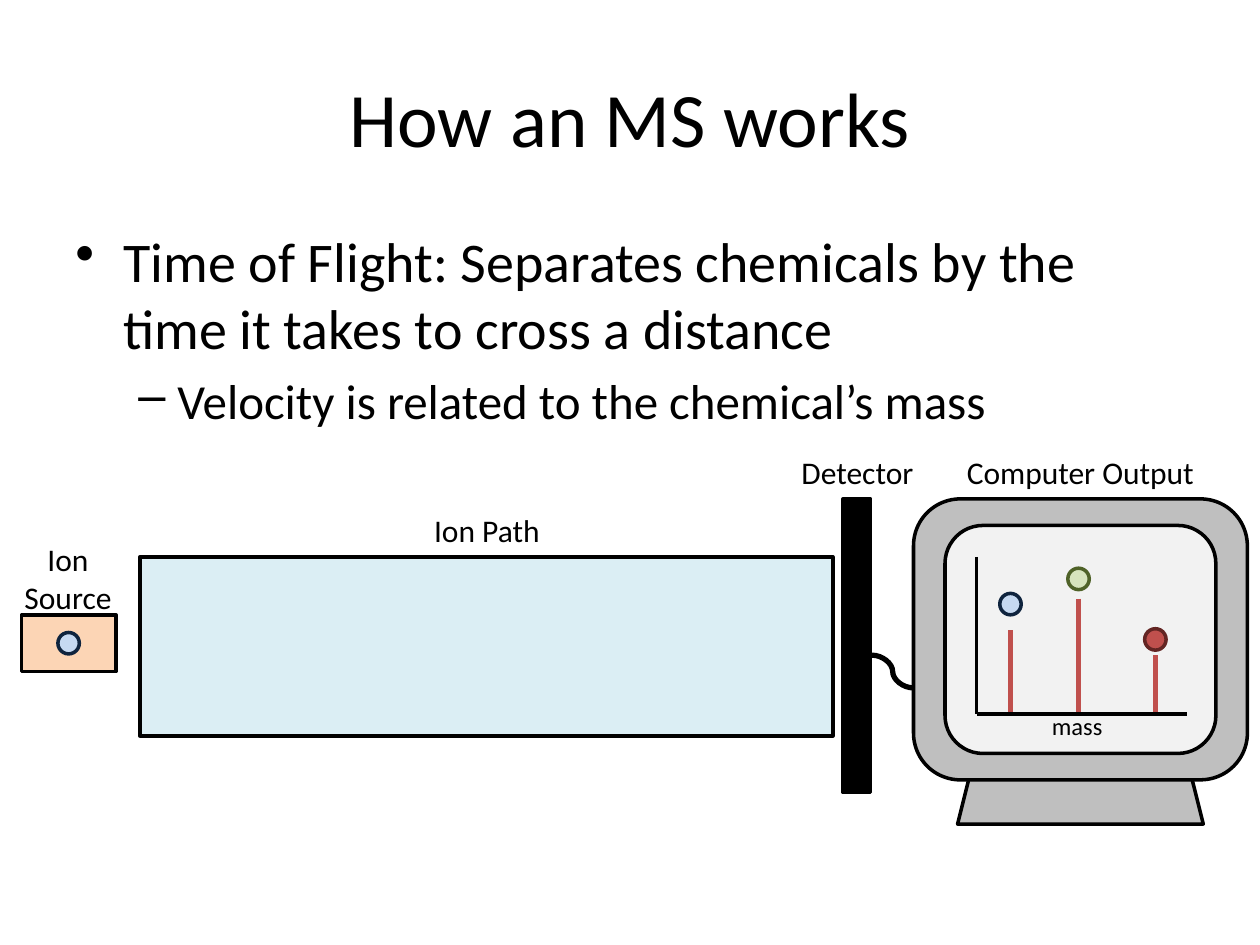
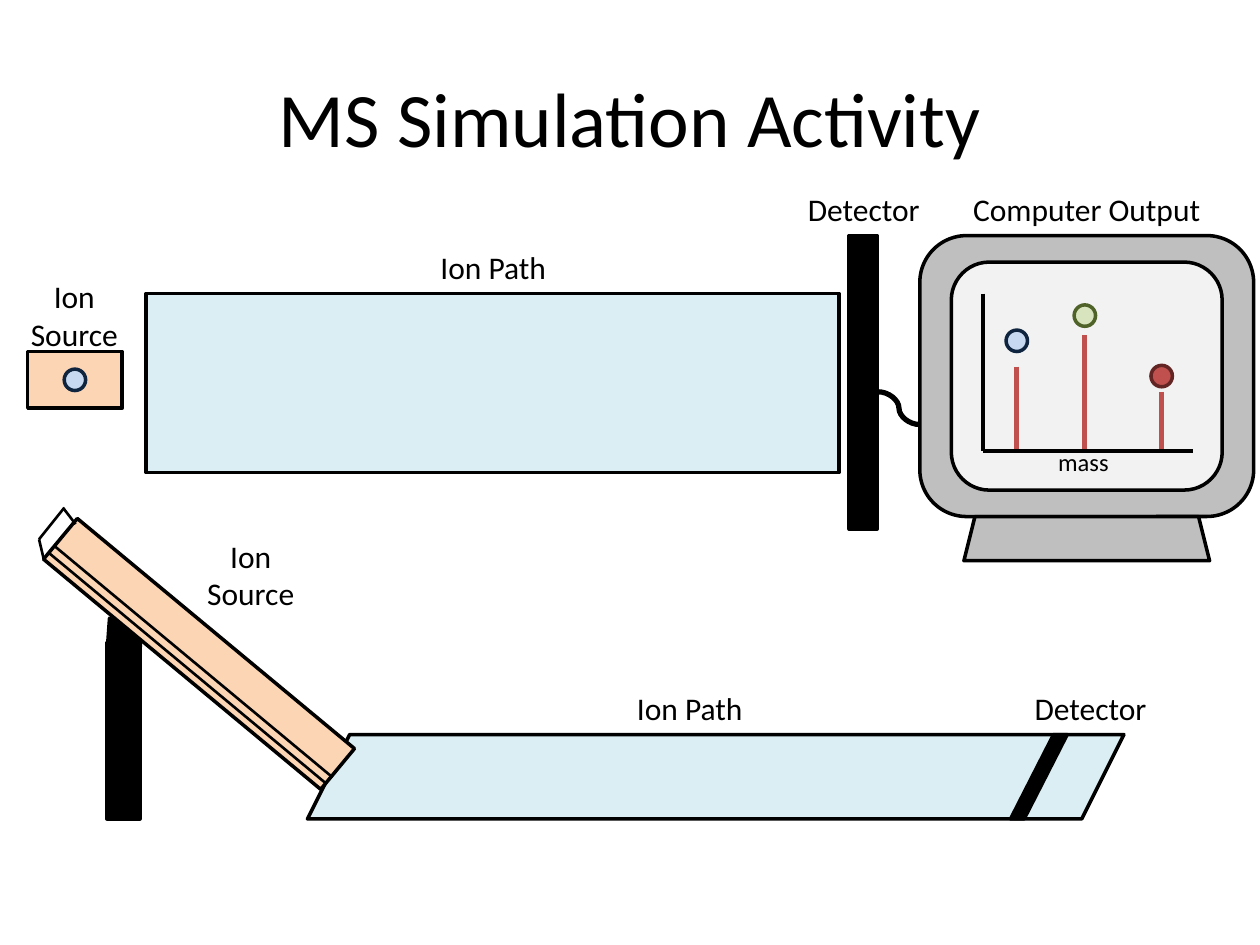
from dataclasses import dataclass

from lxml import etree
from pptx import Presentation, util as u
from pptx.dml.color import RGBColor
from pptx.enum import shapes, text
from pptx.oxml.ns import qn
from pptx.slide import Slide
from pptx.text.text import TextFrame

FONT = "Calibri"
COLORS = {
    "black": "000000",
    "path": "DBEEF4",
    "source": "FCD5B5",
    "casing": "BFBFBF",
    "screen": "F2F2F2",
    "light_ion": "C6D9F1",
    "light_edge": "0F243E",
    "medium_ion": "D7E4BD",
    "medium_edge": "4F6228",
    "heavy_ion": "C0504D",
    "heavy_edge": "632523",
    "signal": "C0504D",
}
SHAPE = shapes.MSO_SHAPE
LINK = shapes.MSO_CONNECTOR
ION_SIZE = 0.17
SIGNAL_BASE = 5.65


@dataclass(frozen=True)
class Part:
    kind: int
    x: float
    y: float
    w: float
    h: float
    fill: str
    edge: str = "black"
    turn: float = 0
    adj: float | None = None


@dataclass(frozen=True)
class Stroke:
    x1: float
    y1: float
    x2: float
    y2: float
    width: float
    color: str = "black"
    kind: int = LINK.STRAIGHT


@dataclass(frozen=True)
class Label:
    text: str
    x: float
    y: float
    w: float
    h: float = 0.4
    size: int = 18
    align: int = text.PP_ALIGN.CENTER


@dataclass(frozen=True)
class Peak:
    x: float
    top: float
    ion_top: float
    ion: str


@dataclass(frozen=True)
class Bullet:
    text: str
    mark: str
    size: int
    left: float
    hang: float
    level: int = 0


Item = Part | Stroke | Label


def ion(center: float, top: float, mass: str) -> Part:
    return Part(SHAPE.OVAL, center - ION_SIZE / 2, top, ION_SIZE, ION_SIZE,
                f"{mass}_ion", f"{mass}_edge")


PEAKS = [
    Peak(8.02, 5.0, 4.71, "light"),
    Peak(8.56, 4.75, 4.51, "medium"),
    Peak(9.17, 5.2, 4.99, "heavy"),
]

SPECTROMETER: list[Item] = [
    Part(SHAPE.RECTANGLE, 1.11, 4.42, 5.5, 1.42, "path"),
    Part(SHAPE.RECTANGLE, 0.17, 4.88, 0.75, 0.45, "source"),
    Part(SHAPE.ROUNDED_RECTANGLE, 7.25, 3.96, 2.65, 2.23, "casing"),
    Part(SHAPE.TRAPEZOID, 7.6, 6.19, 1.95, 0.35, "casing"),
    Part(SHAPE.ROUNDED_RECTANGLE, 7.5, 4.17, 2.15, 1.81, "screen"),
    Stroke(6.92, 5.2, 7.25, 5.46, 3, kind=LINK.CURVE),
    Stroke(7.75, 4.42, 7.75, 5.67, 2.25),
    Stroke(7.75, 5.67, 9.42, 5.67, 2.25),
    Label("mass", 8.25, 5.59, 0.67, 0.34, 14, text.PP_ALIGN.LEFT),
    ion(0.545, 5.02, "light"),
    *(item for peak in PEAKS for item in (
        Stroke(peak.x, peak.top, peak.x, SIGNAL_BASE, 3, "signal"),
        ion(peak.x, peak.ion_top, peak.ion),
    )),
    Label("Ion Source", 0.04, 4.24, 1, 0.71),
    Label("Ion Path", 3.06, 4.01, 1.61),
    Label("Detector", 6, 3.55, 1.61),
    Label("Computer Output", 7.5, 3.55, 2.15),
    Part(SHAPE.RECTANGLE, 6.69, 3.96, 0.22, 2.33, "black"),
]

RAMP_MODEL: list[Item] = [
    Part(SHAPE.PARALLELOGRAM, 2.44, 5.83, 6.48, 0.67, "path", adj=0.5),
    Part(SHAPE.PARALLELOGRAM, 8.02, 5.83, 0.45, 0.67, "black", adj=0.76),
    Label("Ion Source", 1.49, 4.21, 1, 0.71),
    Label("Ion Path", 4.67, 5.42, 1.61),
    Label("Detector", 7.85, 5.42, 1.61),
    Part(SHAPE.PARALLELOGRAM, 0.8, 4.97, 0.37, 0.26, "black", turn=94.2, adj=0.67),
    Part(SHAPE.RECTANGLE, 0.85, 5.1, 0.26, 1.4, "black"),
    Part(SHAPE.RECTANGLE, 0.15, 4.98, 2.86, 0.42, "source", turn=39.7),
    Stroke(0.44, 4.34, 2.64, 6.17, 1.5),
    Stroke(0.39, 4.39, 2.59, 6.22, 1.5),
    Stroke(0.31, 4.28, 0.35, 4.45, 1.5),
    Stroke(0.51, 4.03, 0.31, 4.28, 1.5),
    Stroke(0.6, 4.16, 0.5, 4.03, 1.5),
]

BULLETS = [
    Bullet("Time of Flight: Separates chemicals by the time it takes to cross a distance",
           "•", 32, 0.38, 0.38),
    Bullet("Velocity is related to the chemical’s mass", "–", 28, 0.81, 0.31, 1),
]


def rgb(name: str) -> RGBColor:
    return RGBColor.from_string(COLORS[name])


def add_frame(s: Slide, x: float, y: float, w: float, h: float) -> TextFrame:
    tf = s.shapes.add_textbox(u.Inches(x), u.Inches(y), u.Inches(w), u.Inches(h)).text_frame
    tf.word_wrap = True
    return tf


def style_runs(p, size: int) -> None:
    for r in p.runs:
        r.font.name = FONT
        r.font.size = u.Pt(size)
        r.font.color.rgb = rgb("black")


def draw_label(s: Slide, label: Label, dx: float = 0, dy: float = 0) -> TextFrame:
    tf = add_frame(s, label.x + dx, label.y + dy, label.w, label.h)
    tf.text = label.text
    p = tf.paragraphs[0]
    p.alignment = label.align
    style_runs(p, label.size)
    return tf


def draw_part(s: Slide, part: Part, dx: float, dy: float) -> None:
    sp = s.shapes.add_shape(part.kind, u.Inches(part.x + dx), u.Inches(part.y + dy),
                            u.Inches(part.w), u.Inches(part.h))
    sp.shadow.inherit = False
    sp.rotation = part.turn
    if part.adj is not None:
        sp.adjustments[0] = part.adj
    sp.fill.solid()
    sp.fill.fore_color.rgb = rgb(part.fill)
    sp.line.color.rgb = rgb(part.edge)
    sp.line.width = u.Pt(2)


def draw_stroke(s: Slide, stroke: Stroke, dx: float, dy: float) -> None:
    cx = s.shapes.add_connector(stroke.kind,
                                u.Inches(stroke.x1 + dx), u.Inches(stroke.y1 + dy),
                                u.Inches(stroke.x2 + dx), u.Inches(stroke.y2 + dy))
    cx.line.color.rgb = rgb(stroke.color)
    cx.line.width = u.Pt(stroke.width)
    etree.SubElement(cx._element.spPr, qn("a:effectLst"))


def draw_items(s: Slide, items: list[Item], dx: float = 0, dy: float = 0) -> None:
    draw = {Part: draw_part, Stroke: draw_stroke, Label: draw_label}
    for item in items:
        draw[type(item)](s, item, dx, dy)


def draw_bullets(s: Slide, bullets: list[Bullet]) -> None:
    tf = add_frame(s, 0.5, 1.75, 9, 4.95)
    for i, bullet in enumerate(bullets):
        p = tf.add_paragraph() if i else tf.paragraphs[0]
        p.text = bullet.text
        p.level = bullet.level
        p.space_before = u.Pt(bullet.size * 0.2)
        style_runs(p, bullet.size)
        props = p._p.get_or_add_pPr()
        props.set("marL", str(u.Inches(bullet.left)))
        props.set("indent", str(-u.Inches(bullet.hang)))
        etree.SubElement(props, qn("a:buChar")).set("char", bullet.mark)


def add_titled_slide(prs, title: str) -> Slide:
    s = prs.slides.add_slide(prs.slide_layouts[6])
    tf = draw_label(s, Label(title, 0.5, 0.3, 9, 1.25, 44))
    tf.vertical_anchor = text.MSO_ANCHOR.MIDDLE
    return s


def main() -> None:
    prs = Presentation()
    prs.slide_width = u.Inches(10)
    prs.slide_height = u.Inches(7.5)

    s = add_titled_slide(prs, "How an MS works")
    draw_bullets(s, BULLETS)
    draw_items(s, SPECTROMETER)

    s = add_titled_slide(prs, "MS Simulation Activity")
    draw_items(s, RAMP_MODEL)
    draw_items(s, SPECTROMETER, dx=0.05, dy=-2.09)

    prs.save("out.pptx")


if __name__ == "__main__":
    main()
